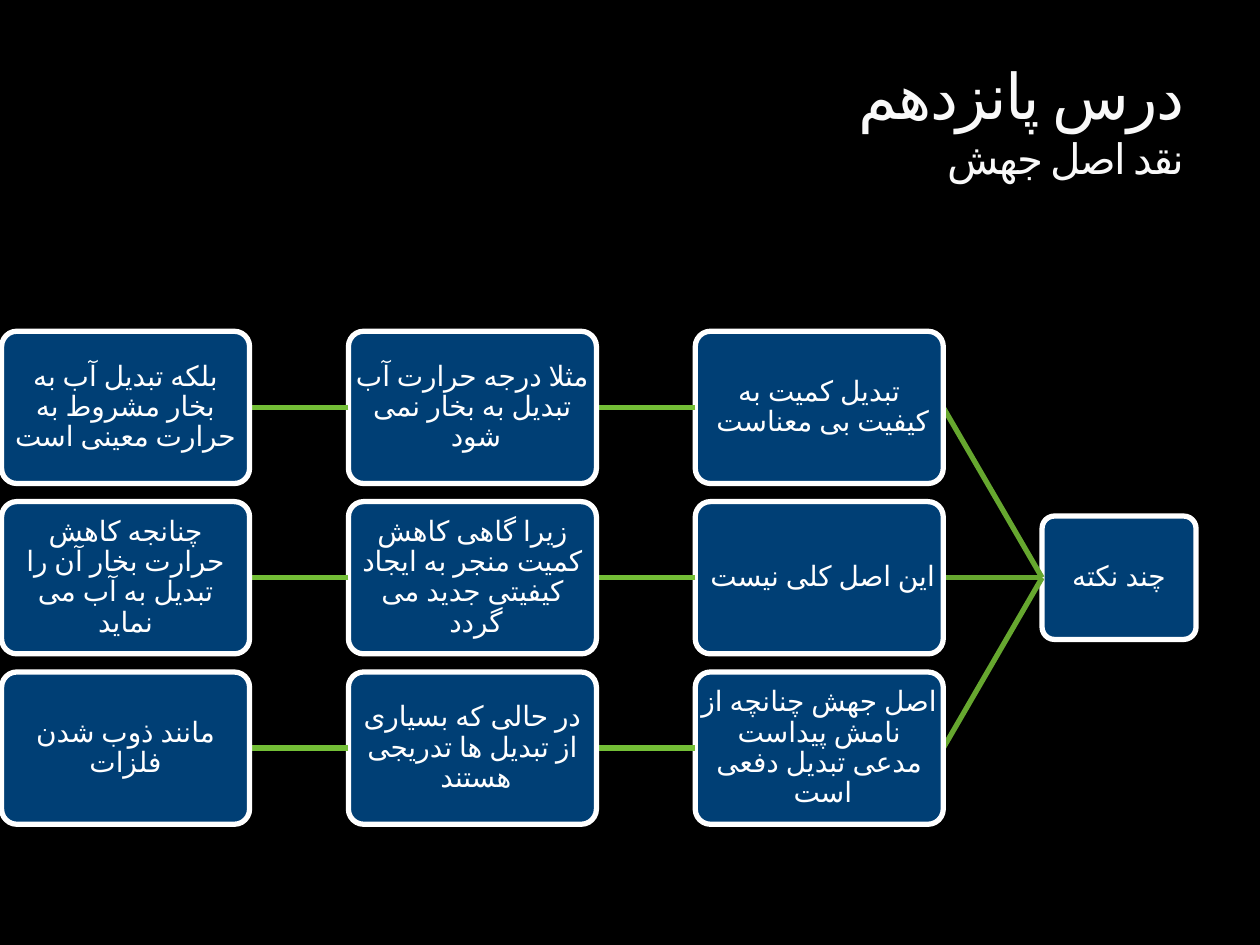
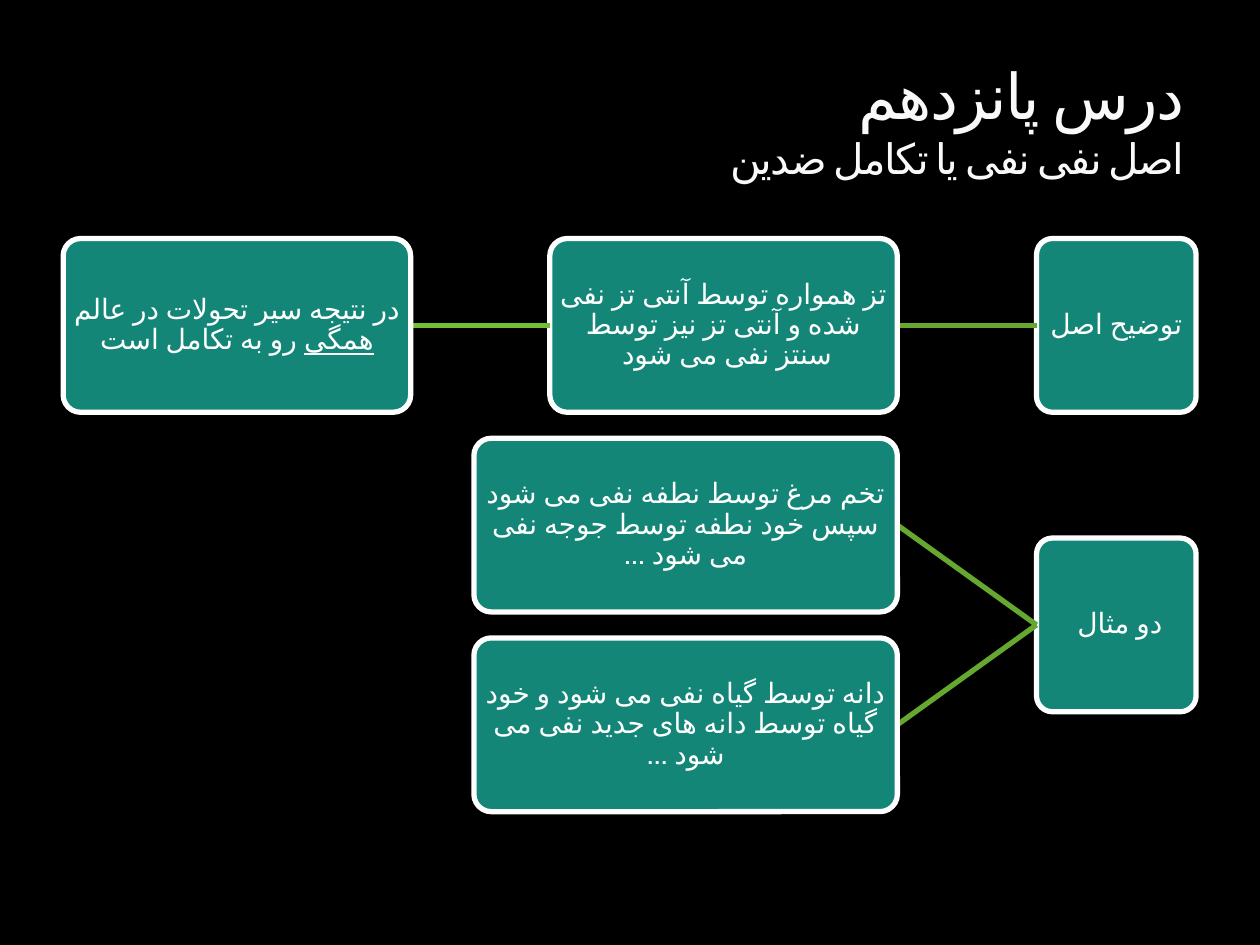
from dataclasses import dataclass

from lxml.etree import SubElement
from pptx import Presentation
from pptx.dml.color import RGBColor
from pptx.enum.shapes import MSO_CONNECTOR as Connector, MSO_SHAPE as Preset
from pptx.enum.text import MSO_ANCHOR as Anchor, PP_ALIGN as Align
from pptx.oxml.ns import qn
from pptx.util import Pt


@dataclass(frozen=True)
class Theme:
    font: str = "Vollkorn"
    background: str = "000000"
    title: str = "F9F9F9"
    white: str = "FFFFFF"
    navy: str = "003F75"
    teal: str = "138677"
    root_link: str = "66A72F"
    chain_link: str = "73BE36"
    title_size: float = 36
    subtitle_size: float = 24
    node_size: float = 16
    stroke: float = 3


@dataclass(frozen=True)
class Node:
    left: float
    top: float
    width: float
    height: float

    @property
    def middle(self):
        return self.top + self.height / 2


THEME = Theme()
MAP_RIGHT = 683.5


def rgb(value):
    return RGBColor.from_string(value)


def write(frame, lines, color, align, anchor, margins, spacing=1.0, after=0, tracking=0):
    frame.word_wrap = True
    frame.vertical_anchor = anchor
    frame.margin_left = frame.margin_right = Pt(margins[0])
    frame.margin_top = frame.margin_bottom = Pt(margins[1])
    paragraph = frame.paragraphs[0]
    paragraph.alignment = align
    paragraph.line_spacing = spacing
    paragraph.space_after = Pt(after)
    paragraph._p.get_or_add_pPr().set("rtl", "1")
    for index, runs in enumerate(lines):
        if index:
            paragraph.add_line_break()
        for text, size, underline in runs:
            run = paragraph.add_run()
            run.text = text
            run.font.size = Pt(size)
            run.font.name = THEME.font
            run.font.underline = underline
            run.font.color.rgb = rgb(color)
            properties = run._r.get_or_add_rPr()
            properties.set("lang", "fa-IR")
            if tracking:
                properties.set("spc", str(tracking * 100))


def add_title(slide, lesson, topic):
    frame = slide.shapes.add_textbox(Pt(36), Pt(12), Pt(648), Pt(96)).text_frame
    write(frame, [[(lesson, THEME.title_size, False)], [(topic, THEME.subtitle_size, False)]],
          color=THEME.title, align=Align.RIGHT, anchor=Anchor.BOTTOM, margins=(7.2, 3.6), tracking=-1)


def add_node(slide, node, text, fill):
    box = slide.shapes.add_shape(Preset.ROUNDED_RECTANGLE, Pt(node.left), Pt(node.top),
                                 Pt(node.width), Pt(node.height))
    box.adjustments[0] = 0.1
    box.shadow.inherit = False
    box.fill.solid()
    box.fill.fore_color.rgb = rgb(fill)
    box.line.color.rgb = rgb(THEME.white)
    box.line.width = Pt(THEME.stroke)
    parts = [(text, False)] if isinstance(text, str) else text
    write(box.text_frame, [[(part, THEME.node_size, underline) for part, underline in parts]],
          color=THEME.white, align=Align.CENTER, anchor=Anchor.MIDDLE, margins=(0.8, 0.8),
          spacing=0.9, after=5.6)


def add_link(slide, parent, child, color):
    link = slide.shapes.add_connector(Connector.STRAIGHT, Pt(parent.left), Pt(parent.middle),
                                      Pt(child.left + child.width), Pt(child.middle))
    link.line.color.rgb = rgb(color)
    link.line.width = Pt(THEME.stroke)
    SubElement(link._element.spPr, qn("a:effectLst"))


def add_branch(slide, root, texts, top, width, height, gap, fill):
    parent, color = root, THEME.root_link
    for text in texts:
        child = Node(parent.left - gap - width, top, width, height)
        add_link(slide, parent, child, color)
        add_node(slide, child, text, fill)
        parent, color = child, THEME.chain_link


def add_root(slide, text, middle, width, height, fill):
    root = Node(MAP_RIGHT - width, middle - height / 2, width, height)
    add_node(slide, root, text, fill)
    return root


def new_slide(deck, topic):
    slide = deck.slides.add_slide(deck.slide_layouts[6])
    slide.background.fill.solid()
    slide.background.fill.fore_color.rgb = rgb(THEME.background)
    add_title(slide, "درس پانزدهم", topic)
    return slide


def build_leap_critique(deck):
    slide = new_slide(deck, "نقد اصل جهش")
    first_top, pitch, height = 189.3, 97.35, 87
    root = add_root(slide, "چند نکته", first_top + pitch + height / 2, 88, 70.5, THEME.navy)
    points = [
        ["تبدیل کمیت به کیفیت بی معناست ",
         "مثلا درجه حرارت آب تبدیل به بخار نمی شود ",
         "بلکه تبدیل آب به بخار مشروط به حرارت معینی است"],
        ["این اصل کلی نیست ",
         "زیرا گاهی کاهش کمیت منجر به ایجاد کیفیتی جدید می گردد ",
         "چنانجه کاهش حرارت بخار آن را تبدیل به آب می نماید"],
        ["اصل جهش چنانچه از نامش پیداست مدعی تبدیل دفعی است ",
         "در حالی که بسیاری از تبدیل ها تدریجی هستند ",
         "مانند ذوب شدن فلزات"],
    ]
    for row, texts in enumerate(points):
        add_branch(slide, root, texts, first_top + row * pitch, 141.7, height, 56.5, THEME.navy)


def build_negation_principle(deck):
    slide = new_slide(deck, "اصل نفی نفی یا تکامل ضدین")
    first_top, pitch, height = 136.3, 114.1, 99.3
    root_width, gap = 91.2, 79.5

    explanation = add_root(slide, "توضیح اصل", first_top + height / 2, root_width, height, THEME.teal)
    reasoning = [
        "تز همواره توسط آنتی تز نفی شده و آنتی تز نیز توسط سنتز نفی می شود ",
        [("در نتیجه سیر تحولات در عالم ", False), ("همگی", True), (" رو به تکامل است", False)],
    ]
    add_branch(slide, explanation, reasoning, first_top, 198.6, height, gap, THEME.teal)

    examples = add_root(slide, "دو مثال ", first_top + 1.5 * pitch + height / 2,
                        root_width, height, THEME.teal)
    cases = [
        "تخم مرغ توسط نطفه نفی می شود سپس خود نطفه توسط جوجه نفی می شود ...",
        "دانه توسط گیاه نفی می شود و خود گیاه توسط دانه های جدید نفی می شود ...",
    ]
    for row, case in enumerate(cases, start=1):
        add_branch(slide, examples, [case], first_top + row * pitch, 242, height, gap, THEME.teal)


def main():
    deck = Presentation()
    deck.slide_width, deck.slide_height = Pt(720), Pt(540)
    build_leap_critique(deck)
    build_negation_principle(deck)
    deck.save("out.pptx")


if __name__ == "__main__":
    main()
